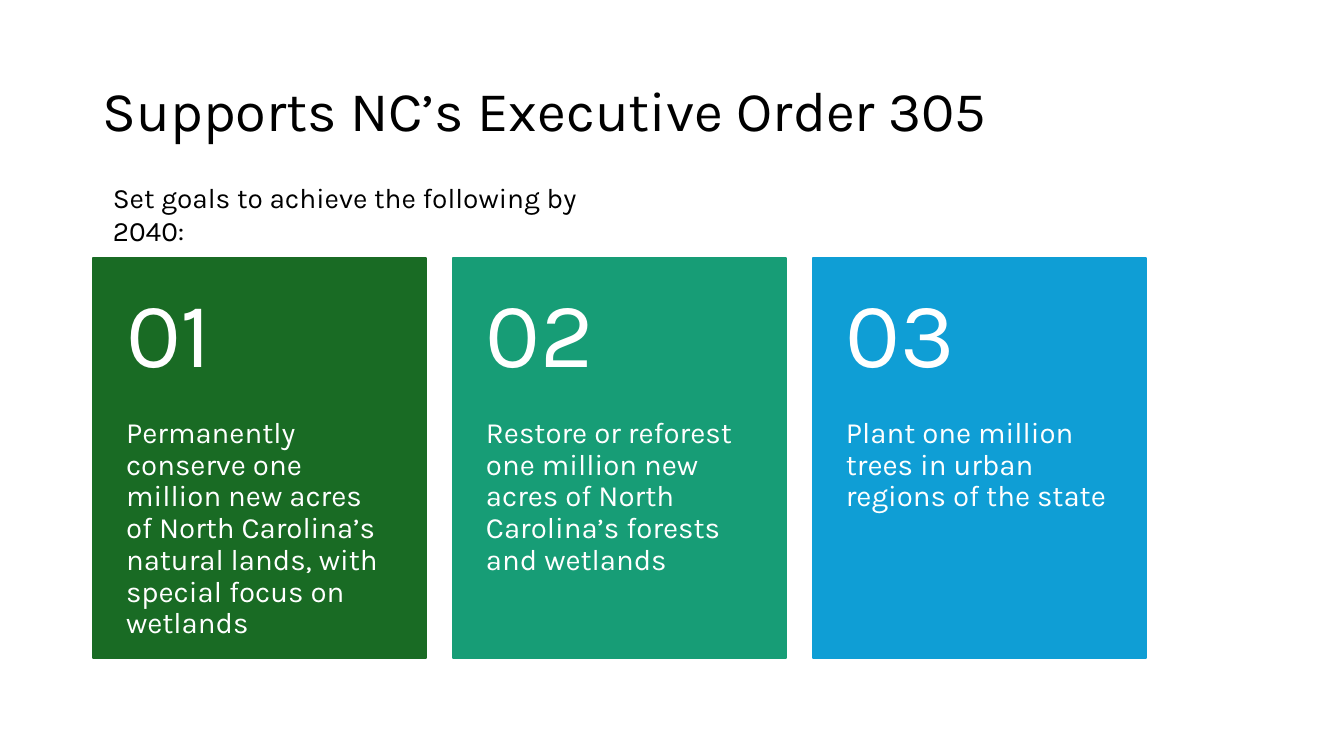
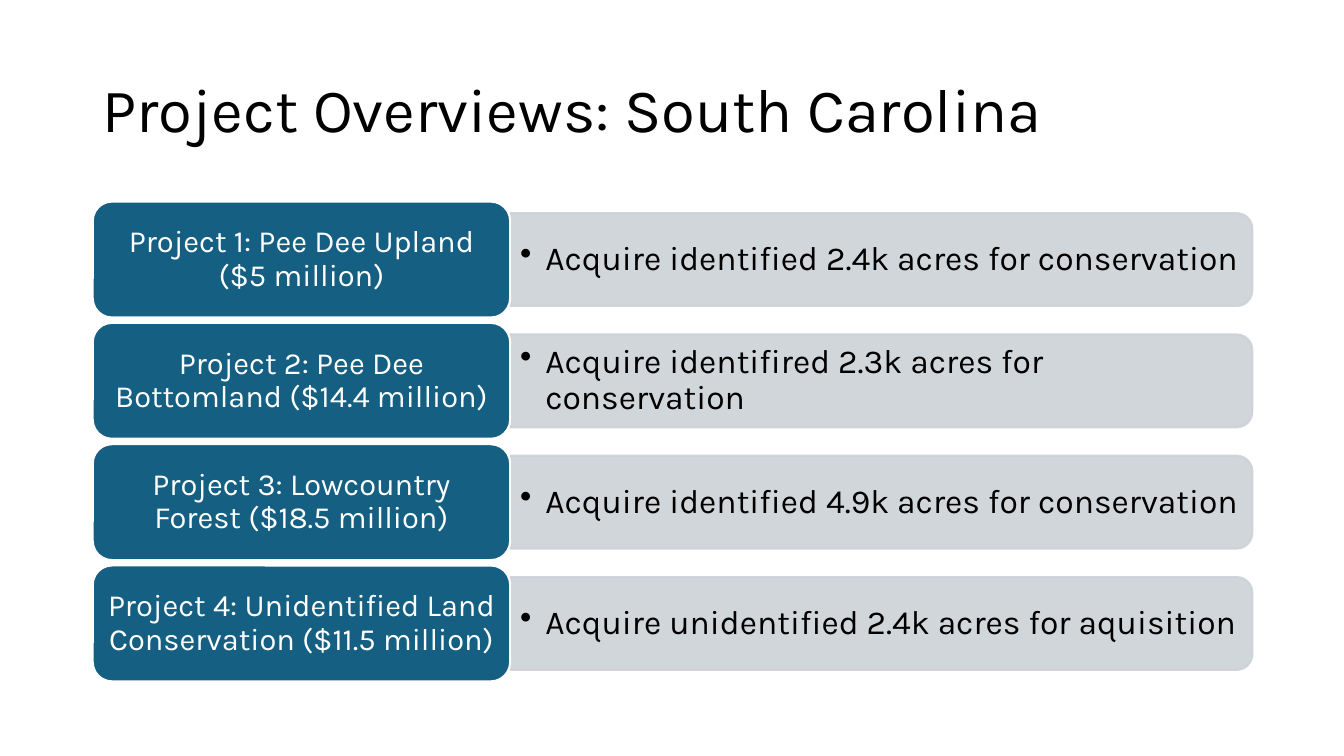
"""Build two slides on conservation goals and projects."""
from lxml import etree
from pptx import Presentation, util as u
from pptx.dml.color import RGBColor
from pptx.enum import shapes, text
from pptx.oxml.ns import qn

FONT = "Karla"
BLACK = RGBColor(0x00, 0x00, 0x00)
WHITE = RGBColor(0xFF, 0xFF, 0xFF)
FOREST = RGBColor(0x19, 0x6B, 0x24)
TEAL = RGBColor(0x17, 0x9D, 0x76)
SKY = RGBColor(0x0F, 0x9E, 0xD5)
NAVY = RGBColor(0x15, 0x60, 0x82)
MIST = RGBColor(0xCC, 0xD2, 0xD8)

WIDTH, HEIGHT = 13.33, 7.5
MARGIN = 0.92
CONTENT_WIDTH = 11.5
TOP, MIDDLE = text.MSO_ANCHOR.TOP, text.MSO_ANCHOR.MIDDLE
LEFT, CENTER = text.PP_ALIGN.LEFT, text.PP_ALIGN.CENTER
INSETS = (0.1, 0.05, 0.1, 0.05)

GOALS_TITLE = "Supports NC’s Executive Order 305"
GOALS_INTRO = "Set goals to achieve the following by 2040:"
GOALS = [
    ("01", "Permanently conserve one million new acres of North Carolina’s "
           "natural lands, with special focus on wetlands", FOREST),
    ("02", "Restore or reforest one million new acres of North Carolina’s "
           "forests and wetlands", TEAL),
    ("03", "Plant one million trees in urban regions of the state", SKY),
]

PROJECTS_TITLE = "Project Overviews: South Carolina"
PROJECTS = [
    ("Project 1: Pee Dee Upland ($5 million)",
     "Acquire identified 2.4k acres for conservation"),
    ("Project 2: Pee Dee Bottomland ($14.4 million)",
     "Acquire identifired 2.3k acres for conservation"),
    ("Project 3: Lowcountry Forest ($18.5 million)",
     "Acquire identified 4.9k acres for conservation"),
    ("Project 4: Unidentified Land Conservation ($11.5 million)",
     "Acquire unidentified 2.4k acres for aquisition"),
]


def inches(*lengths):
    return [u.Inches(length) for length in lengths]


def write(holder, words, size, color, anchor=TOP, align=LEFT,
          insets=INSETS, spacing=0.9, bullet_indent=None):
    frame = holder.text_frame
    frame.word_wrap = True
    frame.vertical_anchor = anchor
    (frame.margin_left, frame.margin_top,
     frame.margin_right, frame.margin_bottom) = inches(*insets)
    paragraph = frame.paragraphs[0]
    paragraph.alignment = align
    paragraph.line_spacing = spacing
    if bullet_indent:
        properties = paragraph._p.get_or_add_pPr()
        indent = u.Inches(bullet_indent)
        properties.set("marL", str(indent))
        properties.set("indent", str(-indent))
        etree.SubElement(properties, qn("a:buChar"), char="•")
    run = paragraph.add_run()
    run.text = words
    run.font.name = FONT
    run.font.size = u.Pt(size)
    run.font.color.rgb = color


def add_words(slide, box, words, size, color=BLACK, **style):
    write(slide.shapes.add_textbox(*inches(*box)), words, size, color, **style)


def add_block(slide, kind, box, fill, line):
    block = slide.shapes.add_shape(kind, *inches(*box))
    block.shadow.inherit = False
    block.fill.solid()
    block.fill.fore_color.rgb = fill
    block.line.color.rgb = line
    block.line.width = u.Pt(1.5)
    return block


def add_titled_slide(deck, title, size):
    slide = deck.slides.add_slide(deck.slide_layouts[6])
    add_words(slide, (MARGIN, 0.4, CONTENT_WIDTH, 1.44), title, size, anchor=MIDDLE)
    return slide


def build_goals(deck):
    slide = add_titled_slide(deck, GOALS_TITLE, 40)
    add_words(slide, (MARGIN + 0.1, 1.74, 5.28, 0.44), GOALS_INTRO, 20, spacing=1)
    top, card_width, card_height, gap = 2.56, 3.31, 3.97, 0.26
    number_height = 0.4 * card_height
    for column, (number, goal, color) in enumerate(GOALS):
        left = MARGIN + column * (card_width + gap)
        add_block(slide, shapes.MSO_SHAPE.RECTANGLE,
                  (left, top, card_width, card_height), color, color)
        add_words(slide, (left, top + number_height, card_width, card_height - number_height),
                  goal, 21, WHITE, insets=(0.33, 0, 0.33, 0.36))
        add_words(slide, (left, top, card_width, number_height),
                  number, 66, WHITE, anchor=MIDDLE, insets=(0.33, 0.18, 0.33, 0.18))


def build_projects(deck):
    slide = add_titled_slide(deck, PROJECTS_TITLE, 44)
    top, bottom, label_height = 2, 6.76, 1.15
    pitch = (bottom - top - label_height) / (len(PROJECTS) - 1)
    label_width = 0.36 * CONTENT_WIDTH
    bar_left = MARGIN + label_width
    bar_width, bar_height = CONTENT_WIDTH - label_width, 0.8 * label_height
    for row, (project, task) in enumerate(PROJECTS):
        label_top = top + row * pitch
        center_x, center_y = bar_left + bar_width / 2, label_top + label_height / 2
        bar = add_block(slide, shapes.MSO_SHAPE.ROUND_2_SAME_RECTANGLE,
                        (center_x - bar_height / 2, center_y - bar_width / 2,
                         bar_height, bar_width), MIST, MIST)
        bar.rotation = 90
        for color in bar._element.spPr.iter(qn("a:srgbClr")):
            etree.SubElement(color, qn("a:alpha"), val="90000")
        add_words(slide, (bar_left, center_y - 0.42, bar_width - 0.04, 0.84),
                  task, 24, anchor=MIDDLE, bullet_indent=0.25)
        label = add_block(slide, shapes.MSO_SHAPE.ROUNDED_RECTANGLE,
                          (MARGIN, label_top, label_width, label_height), NAVY, WHITE)
        write(label, project, 22, WHITE, anchor=MIDDLE, align=CENTER,
              insets=(0.08, 0.05, 0.08, 0.05))


def main():
    deck = Presentation()
    deck.slide_width, deck.slide_height = inches(WIDTH, HEIGHT)
    build_goals(deck)
    build_projects(deck)
    deck.save("out.pptx")


if __name__ == "__main__":
    main()
